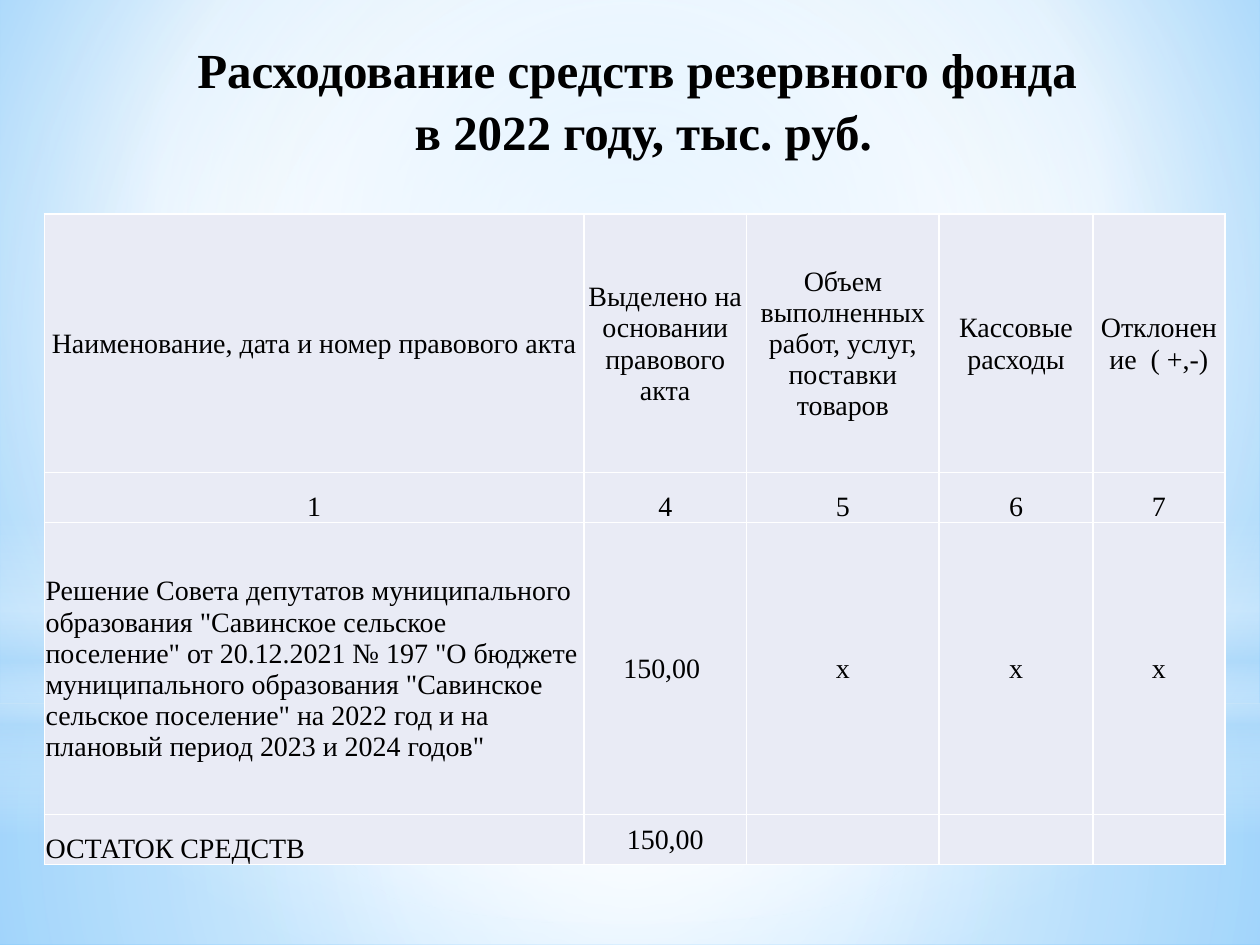
from lxml import etree
from pptx import Presentation
from pptx.dml.color import RGBColor
from pptx.enum import shapes, text
from pptx.oxml import ns
from pptx.util import Pt

FONT = "Times New Roman"
WIDTH, HEIGHT = 720, 540
CENTER, LEFT = text.PP_ALIGN.CENTER, text.PP_ALIGN.LEFT
MIDDLE, BOTTOM = text.MSO_ANCHOR.MIDDLE, text.MSO_ANCHOR.BOTTOM

HEADING = "Расходование средств резервного фонда \vв 2022 году, тыс. руб."
SKY = [(0, "9ED5FF", 100), (60, "FFFFFF", 100), (100, "5BB9FF", 100)]
SKY_FOCUS = (20, 10, 20, 60)
MID_FOCUS = (50, 50, 50, 50)
RECT, OVAL = shapes.MSO_SHAPE.RECTANGLE, shapes.MSO_SHAPE.OVAL
GLOWS = [
    (RECT, 401.8, 138.2, MID_FOCUS,
     [(0, "FFFFFF", 91), (37, "FFFFFF", 76), (100, "B4DCFA", 79)]),
    (RECT, 0, 401.8, MID_FOCUS,
     [(0, "FFFFFF", 89), (48, "FFFFFF", 62), (100, "B4DCFA", 79)]),
    (RECT, 296.6, 180, None,
     [(0, "FFFFFF", 0), (29, "FFFFFF", 30), (45, "B4DCFA", 40),
      (55, "FFFFFF", 26), (65, "B4DCFA", 60), (100, "FFFFFF", 0)]),
    (OVAL, 126, 401.8, MID_FOCUS, [(0, "FFFFFF", 100), (56, "FFFFFF", 0)]),
]

COLUMNS = [308.4, 92.9, 110.1, 87.8, 75.6]
ROWS = [
    (147.6, CENTER, MIDDLE,
     ["Наименование, дата и номер правового акта",
      "Выделено на основании правового акта",
      "Объем выполненных работ, услуг, поставки товаров",
      "Кассовые расходы", "Отклонение  ( +,-)"]),
    (28.6, CENTER, BOTTOM, ["1", "4", "5", "6", "7"]),
    (167, LEFT, MIDDLE,
     ['Решение Совета депутатов муниципального образования "Савинское '
      'сельское поселение" от 20.12.2021 № 197 "О бюджете муниципального '
      'образования "Савинское сельское поселение" на 2022 год и на '
      'плановый период 2023 и 2024 годов"',
      "150,00 ", "х", "х", "х"]),
    (28.6, LEFT, BOTTOM, ["ОСТАТОК СРЕДСТВ", "150,00", "", "", ""]),
]


def color(value):
    return RGBColor.from_string(value)


def add(parent, tag, **attributes):
    return etree.SubElement(parent, ns.qn(tag), {k: str(v) for k, v in attributes.items()})


def fill_gradient(fill, owner, stops, focus):
    fill.gradient()
    gradient = owner.find(".//" + ns.qn("a:gradFill"))
    for child in list(gradient):
        gradient.remove(child)
    stop_list = add(gradient, "a:gsLst")
    for position, value, opacity in stops:
        stop = add(stop_list, "a:gs", pos=position * 1000)
        tint = add(stop, "a:srgbClr", val=value)
        if opacity < 100:
            add(tint, "a:alpha", val=opacity * 1000)
    if focus:
        shade = add(gradient, "a:path", path="circle")
        add(shade, "a:fillToRect", **{side: share * 1000 for side, share in zip("ltrb", focus)})
    else:
        add(gradient, "a:lin", ang=90 * 60000, scaled=0)


def style(paragraph, size, align, bold=False):
    paragraph.alignment = align
    font = paragraph.font
    font.name, font.size, font.bold = FONT, Pt(size), bold
    font.color.rgb = color("000000")


def add_borders(cell):
    properties = cell._tc.get_or_add_tcPr()
    for side in "LRTB":
        line = add(properties, f"a:ln{side}", w=Pt(1))
        add(add(line, "a:solidFill"), "a:srgbClr", val="FFFFFF")


def add_glows(slide):
    for kind, top, height, focus, stops in GLOWS:
        glow = slide.shapes.add_shape(kind, 0, Pt(top), Pt(WIDTH), Pt(height))
        glow.shadow.inherit = False
        glow.line.fill.background()
        fill_gradient(glow.fill, glow._element, stops, focus)


def add_heading(slide):
    heading = slide.shapes.add_textbox(Pt(42.5), Pt(17.3), Pt(650), Pt(42.5))
    heading.text_frame.word_wrap = True
    paragraph = heading.text_frame.paragraphs[0]
    paragraph.text = HEADING
    paragraph.line_spacing = 1.05
    style(paragraph, 28, CENTER, bold=True)


def add_spending(slide):
    spending = slide.shapes.add_table(
        len(ROWS), len(COLUMNS), Pt(25.3), Pt(122.4),
        Pt(sum(COLUMNS)), Pt(sum(row[0] for row in ROWS))).table
    spending.first_row = spending.horz_banding = False
    for column, width in zip(spending.columns, COLUMNS):
        column.width = Pt(width)
    for r, (height, first_align, first_anchor, values) in enumerate(ROWS):
        spending.rows[r].height = Pt(height)
        for c, value in enumerate(values):
            cell = spending.cell(r, c)
            cell.text = value
            is_total = r == len(ROWS) - 1 and c > 0
            cell.vertical_anchor = MIDDLE if is_total else first_anchor
            cell.margin_left = cell.margin_right = cell.margin_top = Pt(0.75)
            cell.margin_bottom = 0
            style(cell.text_frame.paragraphs[0], 16, CENTER if c else first_align)
            add_borders(cell)
            cell.fill.solid()
            cell.fill.fore_color.rgb = color("E9EBF5")


def main():
    deck = Presentation()
    deck.slide_width, deck.slide_height = Pt(WIDTH), Pt(HEIGHT)
    slide = deck.slides.add_slide(deck.slide_layouts[6])
    fill_gradient(slide.background.fill, slide._element, SKY, SKY_FOCUS)
    add_glows(slide)
    add_heading(slide)
    add_spending(slide)
    deck.save("out.pptx")


if __name__ == "__main__":
    main()
